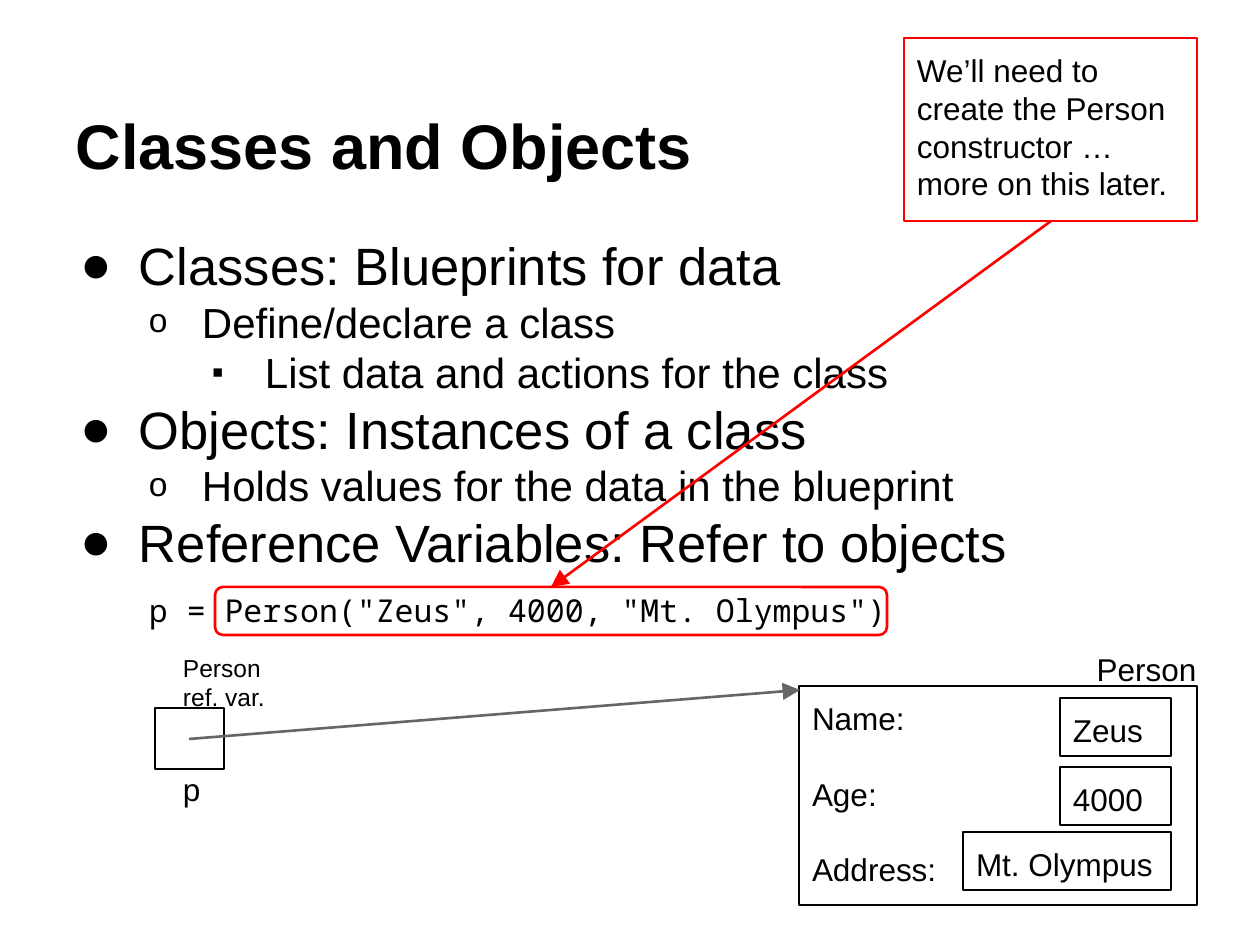
from dataclasses import dataclass
from typing import Any, NamedTuple

from lxml.etree import SubElement
from pptx import Presentation
from pptx.dml.color import RGBColor
from pptx.enum.shapes import MSO_CONNECTOR, MSO_SHAPE
from pptx.enum.text import MSO_ANCHOR, PP_ALIGN
from pptx.oxml.ns import qn
from pptx.util import Emu, Pt

PX_PER_INCH = 126


def px(length: int) -> Emu:
    return Emu(round(length * 914400 / PX_PER_INCH))


@dataclass(frozen=True)
class Theme:
    black: RGBColor = RGBColor(0, 0, 0)
    red: RGBColor = RGBColor(255, 0, 0)
    gray: RGBColor = RGBColor(102, 102, 102)
    sans: str = "Arial"
    mono: str = "Noto Sans Mono"
    title: int = 36
    topic: int = 30
    detail: int = 24
    text: int = 18
    small: int = 14
    thin: float = 0.75
    thick: float = 1.5


THEME = Theme()


class Area(NamedTuple):
    left: int
    top: int
    width: int
    height: int


@dataclass(frozen=True)
class Box:
    """A text box, or an outlined shape when it has a line colour."""
    area: Area
    lines: tuple[str, ...] = ()
    size: int = THEME.text
    font: str = THEME.sans
    bold: bool = False
    align: PP_ALIGN = PP_ALIGN.LEFT
    anchor: MSO_ANCHOR = MSO_ANCHOR.TOP
    gap: float = 0
    line: RGBColor | None = None
    line_width: float = THEME.thin
    corner: float | None = None


class Bullet(NamedTuple):
    text: str
    level: int = 0


class BulletStyle(NamedTuple):
    mark: str
    size: int
    margin: int
    hanging: int
    mark_percent: int


class Arrow(NamedTuple):
    start: tuple[int, int]
    end: tuple[int, int]
    color: RGBColor


BULLET_STYLES = (
    BulletStyle("●", THEME.topic, 63, 58, 100),
    BulletStyle("o", THEME.detail, 126, 53, 80),
    BulletStyle("▪", THEME.detail, 189, 53, 80),
)
BULLETS_AREA = Area(63, 220, 1134, 684)
BULLETS = (
    Bullet("Classes: Blueprints for data"),
    Bullet("Define/declare a class", 1),
    Bullet("List data and actions for the class", 2),
    Bullet("Objects: Instances of a class"),
    Bullet("Holds values for the data in the blueprint", 1),
    Bullet("Reference Variables: Refer to objects"),
)
TITLE = Box(Area(63, 38, 1134, 157), ("Classes and Objects",), THEME.title,
            bold=True, anchor=MSO_ANCHOR.BOTTOM)
ANNOTATIONS = (
    Box(Area(136, 578, 1021, 132), ('p = Person("Zeus", 4000, "Mt. Olympus")',),
        font=THEME.mono),
    Box(Area(170, 757, 103, 60), ("p",)),
    Box(Area(155, 708, 69, 61), line=THEME.black, line_width=THEME.thick),
    Box(Area(170, 640, 121, 47), ("Person ref. var.",), THEME.small),
    Box(Area(215, 587, 672, 48), line=THEME.red, line_width=THEME.thick, corner=0.167),
    Box(Area(904, 38, 293, 183),
        ("We’ll need to create the Person constructor … more on this later.",),
        line=THEME.red),
)
PERSON_OBJECT = (
    Box(Area(799, 686, 398, 219), ("Name:", "Age:", "Address:"), gap=21.6,
        line=THEME.black),
    Box(Area(1060, 698, 111, 58), ("Zeus",), line=THEME.black),
    Box(Area(1060, 767, 111, 58), ("4000",), line=THEME.black),
    Box(Area(963, 832, 208, 58), ("Mt. Olympus",), line=THEME.black),
    Box(Area(1080, 637, 133, 67), ("Person",), align=PP_ALIGN.CENTER),
)
ARROWS = (
    Arrow((1051, 221), (551, 587), THEME.red),
    Arrow((189, 739), (800, 690), THEME.gray),
)


def apply_format(target: Any, values: dict[str, Any]) -> None:
    for name, value in values.items():
        setattr(target, name, value)


def prepare_frame(shape: Any, anchor: MSO_ANCHOR = MSO_ANCHOR.TOP) -> Any:
    frame = shape.text_frame
    inset = px(13)
    apply_format(frame, {
        "word_wrap": True, "vertical_anchor": anchor,
        "margin_left": inset, "margin_top": inset,
        "margin_right": inset, "margin_bottom": inset,
    })
    return frame


def write_line(frame: Any, index: int, text: str, size: int,
               font: str = THEME.sans, bold: bool = False) -> Any:
    paragraph = frame.add_paragraph() if index else frame.paragraphs[0]
    run = paragraph.add_run()
    run.text = text
    apply_format(run.font, {"name": font, "size": Pt(size), "bold": bold})
    run.font.color.rgb = THEME.black
    return paragraph


def draw_box(shapes: Any, box: Box) -> None:
    area = [px(length) for length in box.area]
    if box.line is None:
        shape = shapes.add_textbox(*area)
    else:
        rounded = box.corner is not None
        kind = MSO_SHAPE.ROUNDED_RECTANGLE if rounded else MSO_SHAPE.RECTANGLE
        shape = shapes.add_shape(kind, *area)
        if rounded:
            shape.adjustments[0] = box.corner
        shape.shadow.inherit = False
        shape.fill.background()
        shape.line.color.rgb = box.line
        shape.line.width = Pt(box.line_width)
    frame = prepare_frame(shape, box.anchor)
    for index, text in enumerate(box.lines):
        paragraph = write_line(frame, index, text, box.size, box.font, box.bold)
        apply_format(paragraph, {
            "alignment": box.align, "space_before": Pt(box.gap if index else 0),
        })


def draw_bullets(shapes: Any, area: Area, bullets: tuple[Bullet, ...]) -> None:
    frame = prepare_frame(shapes.add_textbox(*(px(length) for length in area)))
    for index, bullet in enumerate(bullets):
        style = BULLET_STYLES[bullet.level]
        paragraph = write_line(frame, index, bullet.text, style.size)
        paragraph.level = bullet.level
        properties = paragraph._p.get_or_add_pPr()
        properties.set("marL", str(px(style.margin)))
        properties.set("indent", str(-px(style.hanging)))
        SubElement(properties, qn("a:buSzPct"), val=str(style.mark_percent * 1000))
        SubElement(properties, qn("a:buFont"), typeface=THEME.sans)
        SubElement(properties, qn("a:buChar"), char=style.mark)


def draw_arrow(shapes: Any, arrow: Arrow) -> None:
    ends = (px(length) for length in arrow.start + arrow.end)
    connector = shapes.add_connector(MSO_CONNECTOR.STRAIGHT, *ends)
    connector.line.color.rgb = arrow.color
    connector.line.width = Pt(THEME.thick)
    SubElement(connector.line._get_or_add_ln(), qn("a:tailEnd"),
               type="triangle", w="lg", len="lg")
    SubElement(connector._element.spPr, qn("a:effectLst"))


def main() -> None:
    presentation = Presentation()
    apply_format(presentation, {"slide_width": px(1260), "slide_height": px(945)})
    shapes = presentation.slides.add_slide(presentation.slide_layouts[6]).shapes
    draw_box(shapes, TITLE)
    draw_bullets(shapes, BULLETS_AREA, BULLETS)
    for box in ANNOTATIONS:
        draw_box(shapes, box)
    person_shapes = shapes.add_group_shape().shapes
    for box in PERSON_OBJECT:
        draw_box(person_shapes, box)
    for arrow in ARROWS:
        draw_arrow(shapes, arrow)
    presentation.save("out.pptx")


if __name__ == "__main__":
    main()
